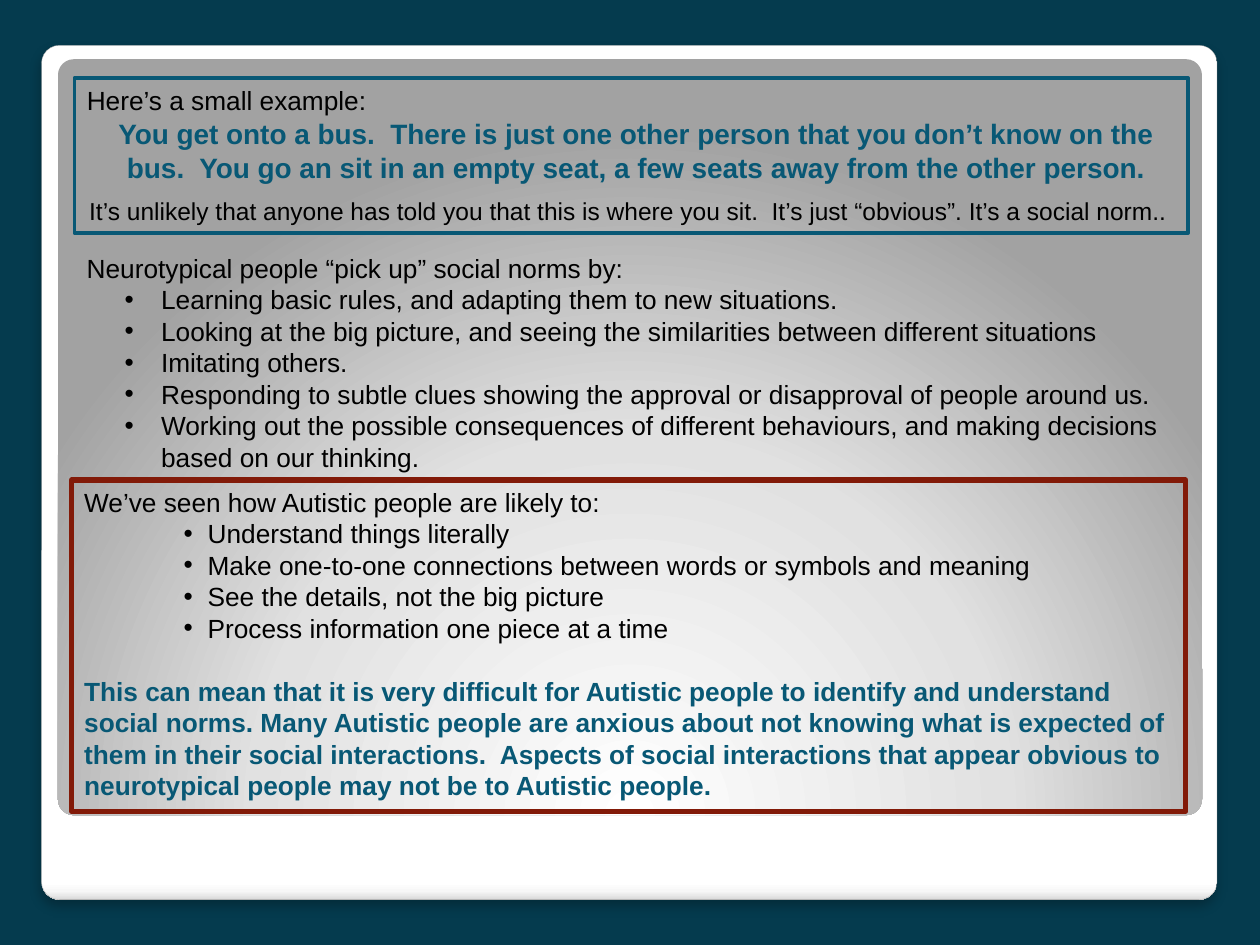
from dataclasses import dataclass

from lxml import etree
from pptx import Presentation
from pptx import util as u
from pptx.dml.color import RGBColor
from pptx.enum import shapes, text
from pptx.oxml import parse_xml
from pptx.oxml.ns import nsdecls, qn


@dataclass(frozen=True)
class Theme:
    back: str = "053B4E"
    ink: str = "000000"
    blue: str = "085875"
    red: str = "821A08"
    edge: str = "A4A4A4"
    font: str = "Arial"
    note: int = 14
    body: int = 15
    lead: int = 16
    card: tuple = ((0, "FFFFFF"), (98, "FFFFFF"), (99, "F7F7F7"), (100, "DADADA"))
    panel: tuple = ((0, "FFFFFF"), (55, "E1E1E1"), (100, "A2A2A2"))


T = Theme()
LINEAR = '<a:lin ang="5400000" scaled="0"/>'
RADIAL = ('<a:path path="circle"><a:fillToRect l="50000" t="175000" '
          'r="50000" b="-75000"/></a:path>')
SHADE = (f'<a:effectLst {nsdecls("a")}><a:outerShdw blurRad="76200" dist="50800" '
         'dir="5400000" algn="tl" rotWithShape="0"><a:srgbClr val="000000">'
         '<a:alpha val="25000"/></a:srgbClr></a:outerShdw></a:effectLst>')


def place(box):
    return [u.Inches(n) for n in box]


def outline(shape, color, width):
    shape.line.color.rgb = RGBColor.from_string(color)
    shape.line.width = u.Pt(width)


def plate(slide, box, stops, way):
    shape = slide.shapes.add_shape(shapes.MSO_SHAPE.ROUNDED_RECTANGLE, *place(box))
    shape.adjustments[0] = 0.021
    shape.shadow.inherit = False
    shape.line.fill.background()
    marks = "".join(f'<a:gs pos="{pos * 1000}"><a:srgbClr val="{color}"/></a:gs>'
                    for pos, color in stops)
    fill = parse_xml(f'<a:gradFill {nsdecls("a")} rotWithShape="1">'
                     f'<a:gsLst>{marks}</a:gsLst>{way}</a:gradFill>')
    props = shape.element.spPr
    props.find(qn("a:prstGeom")).addnext(fill)
    return shape


def frame(slide, box, color, width):
    shape = slide.shapes.add_shape(shapes.MSO_SHAPE.RECTANGLE, *place(box))
    shape.shadow.inherit = False
    shape.fill.background()
    outline(shape, color, width)
    return shape


def bullet(para, left, hang):
    props = para._p.get_or_add_pPr()
    props.set("marL", str(u.Inches(left)))
    props.set("indent", str(u.Inches(-hang)))
    etree.SubElement(props, qn("a:buFont"), typeface=T.font)
    etree.SubElement(props, qn("a:buChar"), char="•")


def write(shape, lines, size=T.body, color=T.ink, bold=False, align="LEFT"):
    body = shape.text_frame
    body.word_wrap = True
    body.vertical_anchor = text.MSO_ANCHOR.TOP
    first = len(body.paragraphs) == 1 and not body.text
    for line in lines:
        para = body.paragraphs[0] if first else body.add_paragraph()
        first = False
        para.alignment = getattr(text.PP_ALIGN, align)
        run = para.add_run()
        run.text = line
        look = {"name": T.font, "size": u.Pt(size), "bold": bold}
        for key, value in look.items():
            setattr(run.font, key, value)
        run.font.color.rgb = RGBColor.from_string(color)
    return body.paragraphs[-len(lines):]


def label(slide, box, lines, **look):
    return write(slide.shapes.add_textbox(*place(box)), lines, **look)


def backdrop(slide, box):
    left, top, wide, high = box
    slide.background.fill.solid()
    slide.background.fill.fore_color.rgb = RGBColor.from_string(T.back)
    card = plate(slide, box, T.card, LINEAR)
    outline(card, T.edge, 0.16)
    props = card.element.spPr
    props.replace(props.find(qn("a:effectLst")), parse_xml(SHADE))
    plate(slide, (left + 0.13, top + 0.11, wide - 0.25, 6), T.panel, RADIAL)


def example(slide, box):
    left, top, wide, _ = box
    label(slide, (left, top, 5.28, 0.35), ["Here’s a small example:"])
    label(slide, (left + 0.04, top + 0.26, wide, 0.64), [
        "You get onto a bus.  There is just one other person that you don’t know "
        "on the bus.  You go an sit in an empty seat, a few seats away from the "
        "other person."], size=T.lead, color=T.blue, bold=True, align="CENTER")
    label(slide, (left + 0.02, top + 0.89, wide, 0.34), [
        "It’s unlikely that anyone has told you that this is where you sit.  "
        "It’s just “obvious”. It’s a social norm.."], size=T.note)
    frame(slide, box, T.blue, 2)


def norms(slide, box):
    paras = label(slide, box, [
        "Neurotypical people “pick up” social norms by:",
        "Learning basic rules, and adapting them to new situations.",
        "Looking at the big picture, and seeing the similarities between "
        "different situations",
        "Imitating others.",
        "Responding to subtle clues showing the approval or disapproval of "
        "people around us.",
        "Working out the possible consequences of different behaviours, and "
        "making decisions based on our thinking."])
    for para in paras[1:]:
        bullet(para, 0.59, 0.29)


def autism(slide, box):
    shape = frame(slide, box, T.red, 3)
    paras = write(shape, [
        "We’ve seen how Autistic people are likely to:",
        "Understand things literally",
        "Make one-to-one connections between words or symbols and meaning",
        "See the details, not the big picture",
        "Process information one piece at a time"])
    for para in paras[1:]:
        bullet(para, 0.98, 0.19)
    close = write(shape, [
        "This can mean that it is very difficult for Autistic people to identify "
        "and understand social norms. Many Autistic people are anxious about not "
        "knowing what is expected of them in their social interactions.  Aspects "
        "of social interactions that appear obvious to neurotypical people may "
        "not be to Autistic people."], color=T.blue, bold=True)
    close[0].space_before = u.Pt(18)


def main():
    deck = Presentation()
    deck.slide_width, deck.slide_height = u.Inches(10), u.Inches(7.5)
    slide = deck.slides.add_slide(deck.slide_layouts[6])
    backdrop(slide, (0.33, 0.36, 9.33, 6.78))
    norms(slide, (0.59, 1.95, 8.8, 1.87))
    autism(slide, (0.57, 3.81, 8.84, 2.63))
    example(slide, (0.59, 0.62, 8.84, 1.23))
    deck.save("out.pptx")


if __name__ == "__main__":
    main()
